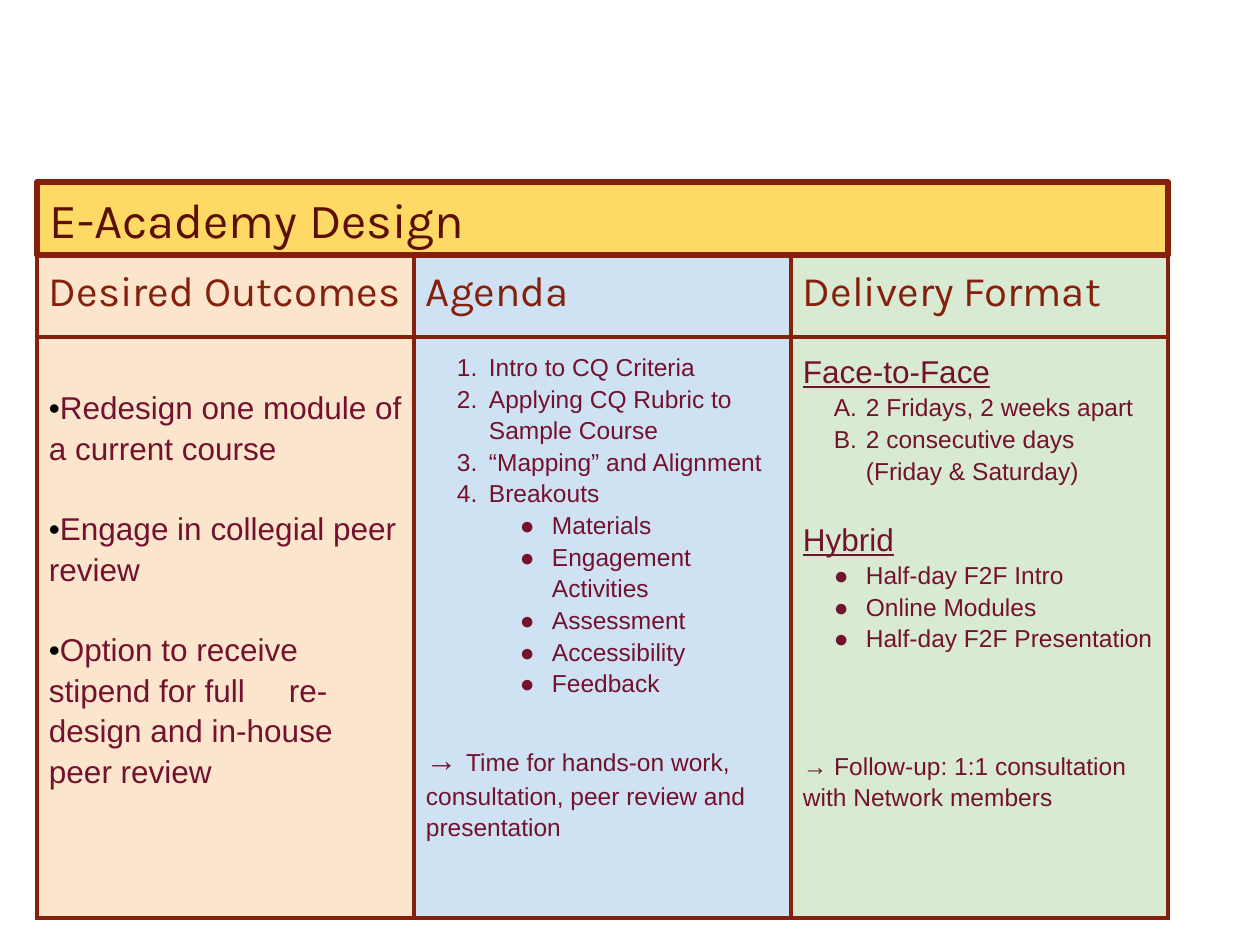
from lxml.etree import SubElement
from pptx import Presentation
from pptx.dml.color import RGBColor
from pptx.enum.shapes import MSO_SHAPE
from pptx.enum.text import MSO_ANCHOR, PP_ALIGN
from pptx.oxml.ns import qn
from pptx.util import Emu, Pt

BROWN = RGBColor(0x85, 0x20, 0x0C)
DARK_BROWN = RGBColor(0x5B, 0x0F, 0x00)
WINE = RGBColor(0x73, 0x12, 0x2E)
BLACK = RGBColor(0x00, 0x00, 0x00)
GOLD = RGBColor(0xFF, 0xD9, 0x66)
PEACH = RGBColor(0xFC, 0xE5, 0xCD)
BLUE = RGBColor(0xCF, 0xE2, 0xF3)
GREEN = RGBColor(0xD9, 0xEA, 0xD3)

SCALE = 914400 / 126
LEFT, TOP, COLUMN = 37, 255, 377
HEADER, BODY = 82, 581
BANNER = 73
SIDE, INSET, HANG = 12, 13, 32
LINE_18, LINE_14 = 40, 32
OUTCOMES_TOP = 49
STIPEND_TAB = 240


def px(length):
    return Emu(round(length * SCALE))


def add_run(paragraph, text, size, color, face="Arial", underline=None):
    run = paragraph.add_run()
    run.text = text
    run.font.size = Pt(size)
    run.font.name = face
    run.font.color.rgb = color
    run.font.underline = underline


outcomes = [
    (0, None, LINE_18 if number else 0, [("•", 18, BLACK), (outcome, 18, WINE)])
    for number, outcome in enumerate((
        "Redesign one module of a current course",
        "Engage in collegial peer review",
        "Option to receive stipend for full\tre-design and in-house peer review"))]

agenda = [(1, "arabicPeriod", 0, [(step, 14, WINE)]) for step in (
    "Intro to CQ Criteria", "Applying CQ Rubric to Sample Course",
    "“Mapping” and Alignment", "Breakouts")]
agenda += [(2, "●", 0, [(breakout, 14, WINE)]) for breakout in (
    "Materials", "Engagement Activities", "Assessment", "Accessibility", "Feedback")]
agenda.append((0, None, LINE_18, [
    ("→ ", 18, WINE),
    ("Time for hands-on work, consultation, peer review and presentation", 14, WINE)]))

delivery = [(0, None, 0, [("Face-to-Face", 18, WINE, "Arial", True)])]
delivery += [(1, "alphaUcPeriod", 0, [(option, 14, WINE)]) for option in (
    "2 Fridays, 2 weeks apart", "2 consecutive days (Friday & Saturday)")]
delivery.append((0, None, LINE_14, [("Hybrid", 18, WINE, "Arial", True)]))
delivery += [(1, "●", 0, [(option, 14, WINE)]) for option in (
    "Half-day F2F Intro", "Online Modules", "Half-day F2F Presentation")]
delivery.append((0, None, 3 * LINE_14, [
    ("→ Follow-up: 1:1 consultation with Network members", 14, WINE)]))

columns = [
    ("Desired Outcomes", PEACH, OUTCOMES_TOP, outcomes),
    ("Agenda", BLUE, INSET, agenda),
    ("Delivery Format", GREEN, INSET, delivery),
]

deck = Presentation()
deck.slide_width, deck.slide_height = px(1260), px(945)
slide = deck.slides.add_slide(deck.slide_layouts[6])

plan = slide.shapes.add_table(
    2, 3, px(LEFT), px(TOP), px(3 * COLUMN), px(HEADER + BODY)).table
plan.first_row = False
plan.horz_banding = False
plan.rows[0].height, plan.rows[1].height = px(HEADER), px(BODY)

for index, (heading, tint, body_top, entries) in enumerate(columns):
    plan.columns[index].width = px(COLUMN)
    heading_cell, body_cell = plan.cell(0, index), plan.cell(1, index)

    for cell, top in ((heading_cell, INSET), (body_cell, body_top)):
        cell.margin_left = cell.margin_right = px(SIDE)
        cell.margin_top, cell.margin_bottom = px(top), px(INSET)
        borders = cell._tc.get_or_add_tcPr()
        for side in ("a:lnL", "a:lnR", "a:lnT", "a:lnB"):
            edge = SubElement(borders, qn(side), w=str(Pt(3)))
            paint = SubElement(edge, qn("a:solidFill"))
            SubElement(paint, qn("a:srgbClr"), val=str(BROWN))
        cell.fill.solid()
        cell.fill.fore_color.rgb = tint

    add_run(heading_cell.text_frame.paragraphs[0], heading, 24, BROWN, "Karla")

    body = body_cell.text_frame
    for number, (level, marker, gap, runs) in enumerate(entries):
        paragraph = body.add_paragraph() if number else body.paragraphs[0]
        layout = paragraph._p.get_or_add_pPr()
        if marker:
            layout.set("marL", str(px(level * 63)))
            layout.set("indent", str(-px(HANG)))
            marker_color = SubElement(layout, qn("a:buClr"))
            SubElement(marker_color, qn("a:srgbClr"), val=str(WINE))
            SubElement(layout, qn("a:buFont"), typeface="Arial")
            if marker == "●":
                SubElement(layout, qn("a:buChar"), char=marker)
            else:
                SubElement(layout, qn("a:buAutoNum"), type=marker)
        if "\t" in runs[-1][0]:
            tabs = SubElement(layout, qn("a:tabLst"))
            SubElement(tabs, qn("a:tab"), pos=str(px(STIPEND_TAB)), algn="l")
        paragraph.line_spacing = 1.15
        if gap:
            paragraph.space_before = px(gap)
        for run in runs:
            add_run(paragraph, *run)

banner = slide.shapes.add_shape(
    MSO_SHAPE.RECTANGLE, px(LEFT), px(TOP - BANNER), px(3 * COLUMN), px(BANNER))
banner.shadow.inherit = False
banner.fill.solid()
banner.fill.fore_color.rgb = GOLD
banner.line.color.rgb = BROWN
banner.line.width = Pt(3)
title = banner.text_frame
title.word_wrap = True
title.vertical_anchor = MSO_ANCHOR.MIDDLE
title.margin_left = title.margin_right = px(INSET)
title.margin_top = title.margin_bottom = px(INSET)
title.paragraphs[0].alignment = PP_ALIGN.LEFT
add_run(title.paragraphs[0], "E-Academy Design", 28, DARK_BROWN, "Karla")

deck.save("out.pptx")
